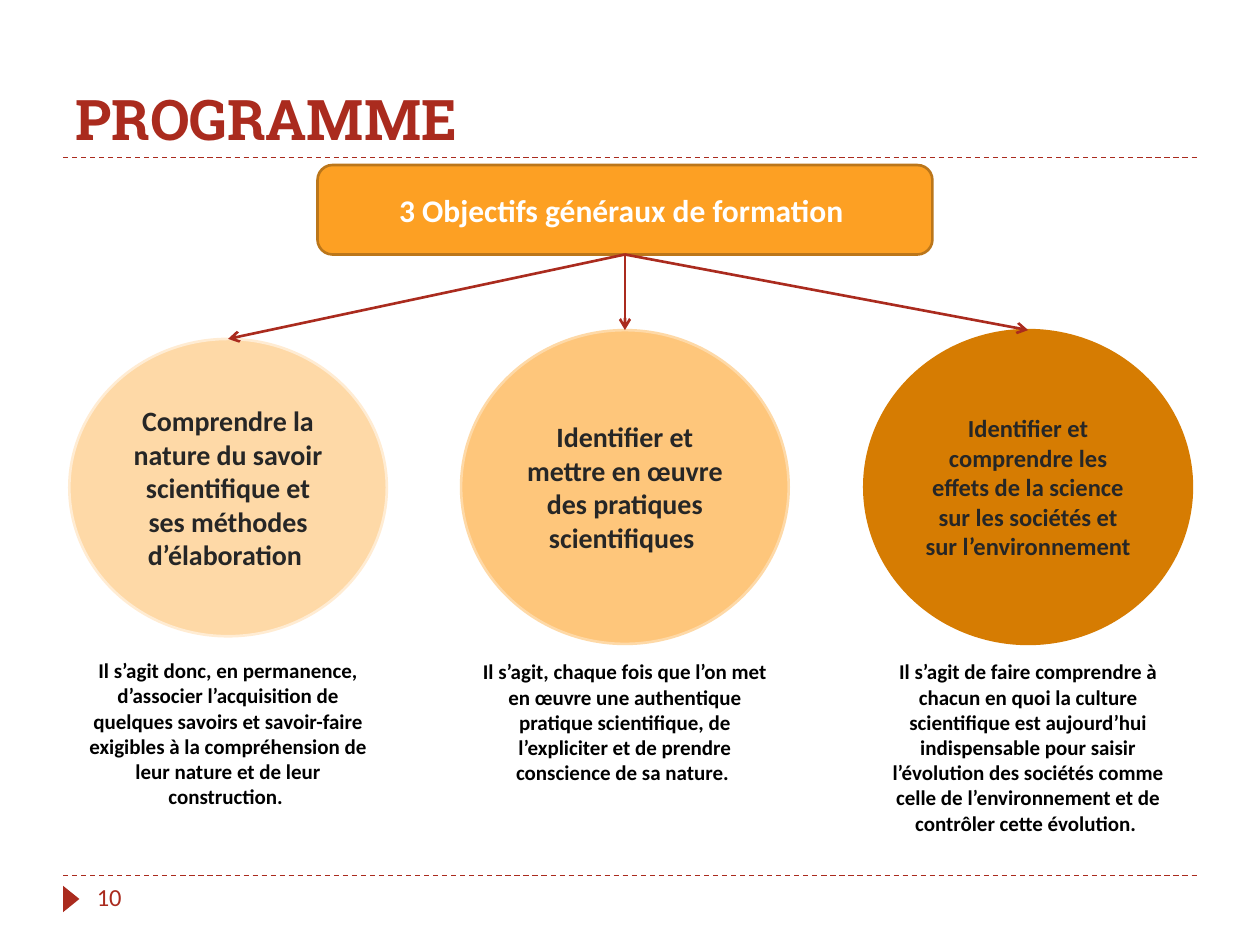
from lxml import etree
from pptx import Presentation
from pptx import util as u
from pptx.dml.color import RGBColor
from pptx.enum import dml, shapes, text
from pptx.oxml import ns

RED = "AA2B1E"
SHAPE = shapes.MSO_SHAPE
MID = text.MSO_ANCHOR.MIDDLE
CENTER = text.PP_ALIGN.CENTER

GOALS = [
    ((0.55, 2.69, 2.52, 2.36), "FED9A7", "FFECD3", 16,
     "Comprendre la nature du savoir scientifique et ses méthodes d’élaboration ",
     (5.17, 1.72),
     "Il s’agit donc, en permanence, d’associer l’acquisition de quelques savoirs "
     "et savoir-faire exigibles à la compréhension de leur nature et de leur "
     "construction. "),
    ((3.66, 2.62, 2.6, 2.49), "FEC67B", "FED9A7", 16,
     "Identifier et mettre en œuvre des pratiques scientifiques ",
     (5.18, 1.31),
     "Il s’agit, chaque fois que l’on met en œuvre une authentique pratique "
     "scientifique, de l’expliciter et de prendre conscience de sa nature. "),
    ((6.86, 2.62, 2.6, 2.49), "D67C02", "D67C02", 14,
     "Identifier et comprendre les effets de la science sur les sociétés et sur "
     "l’environnement ",
     (5.18, 1.72),
     "Il s’agit de faire comprendre à chacun en quoi la culture scientifique est "
     "aujourd’hui indispensable pour saisir l’évolution des sociétés comme celle "
     "de l’environnement et de contrôler cette évolution. "),
]


def paint(color, value):
    """Set a colour from a hex string."""
    color.rgb = RGBColor.from_string(value)


def write(shape, words, size, color, bold=True, font="Calibri",
          align=text.PP_ALIGN.LEFT, anchor=text.MSO_ANCHOR.TOP):
    """Fill a shape with one wrapped paragraph."""
    frame = shape.text_frame
    frame.word_wrap = True
    frame.vertical_anchor = anchor
    para = frame.paragraphs[0]
    para.text = words
    para.alignment = align
    para.font.name = font
    para.font.size = u.Pt(size)
    para.font.bold = bold
    paint(para.font.color, color)


def label(slide, box, *args, **kind):
    """Add a text box."""
    write(slide.shapes.add_textbox(*map(u.Inches, box)), *args, **kind)


def block(slide, kind, box, fill, edge=None):
    """Add a flat preset shape."""
    shape = slide.shapes.add_shape(kind, *map(u.Inches, box))
    shape.shadow.inherit = False
    shape.fill.solid()
    paint(shape.fill.fore_color, fill)
    if edge:
        paint(shape.line.color, edge)
        shape.line.width = u.Pt(1.5)
    else:
        shape.line.fill.background()
    return shape


def stroke(slide, start, end, width):
    """Add a red straight connector without a shadow."""
    line = slide.shapes.add_connector(
        shapes.MSO_CONNECTOR.STRAIGHT, *map(u.Inches, start + end))
    paint(line.line.color, RED)
    line.line.width = u.Pt(width)
    etree.SubElement(line._element.spPr, ns.qn("a:effectLst"))
    return line


def rule(slide, left, top, width):
    """Add a dashed horizontal rule."""
    line = stroke(slide, (left, top), (left + width, top), 0.75)
    line.line.dash_style = dml.MSO_LINE.DASH


def arrow(slide, source, target):
    """Join the bottom of one shape to the top of another."""
    line = stroke(slide, (0, 0), (1, 1), 1.5)
    line.begin_connect(source, 2)
    line.end_connect(target, 0)
    tip = etree.SubElement(line.line._get_or_add_ln(), ns.qn("a:tailEnd"))
    tip.set("type", "arrow")


def header(slide, box):
    """Place the title above its rule."""
    left, top, width, height = box
    label(slide, box, "PROGRAMME", 32, RED, font="Roboto Slab",
          anchor=text.MSO_ANCHOR.BOTTOM)
    rule(slide, left, top + height, width)


def footer(slide, box):
    """Place the rule, marker and page number."""
    left, top, width, height = box
    rule(slide, left, top, width)
    mark = block(slide, SHAPE.ISOSCELES_TRIANGLE,
                 (left - 0.04, top + 0.12, 0.21, 0.13), RED)
    mark.rotation = 90
    label(slide, (left + 0.17, top, 2.17, height), "10", 14, RED, bold=False)


def banner(slide, box):
    """Place the heading box and return it."""
    shape = block(slide, SHAPE.ROUNDED_RECTANGLE, box, "FDA023", "BB761A")
    write(shape, "3 Objectifs généraux de formation ", 18, "FFFFFF",
          align=CENTER, anchor=MID)
    return shape


def goal(slide, box, fill, edge, size, name, span, detail):
    """Place a goal circle with its detail below and return the circle."""
    left, _, width, _ = box
    top, height = span
    disc = block(slide, SHAPE.OVAL, box, fill, edge)
    write(disc, name, size, "262626", align=CENTER, anchor=MID)
    label(slide, (left, top, width, height), detail, 12, "000000", align=CENTER)
    return disc


def main():
    """Build and save the slide."""
    deck = Presentation()
    deck.slide_width, deck.slide_height = u.Inches(10), u.Inches(7.5)
    slide = deck.slides.add_slide(deck.slide_layouts[6])
    header(slide, (0.5, 0.25, 9, 1))
    footer(slide, (0.5, 6.95, 9, 0.4))
    head = banner(slide, (2.52, 1.31, 4.88, 0.71))
    discs = [goal(slide, *item) for item in GOALS]
    for disc in discs:
        arrow(slide, head, disc)
    deck.save("out.pptx")


if __name__ == "__main__":
    main()
